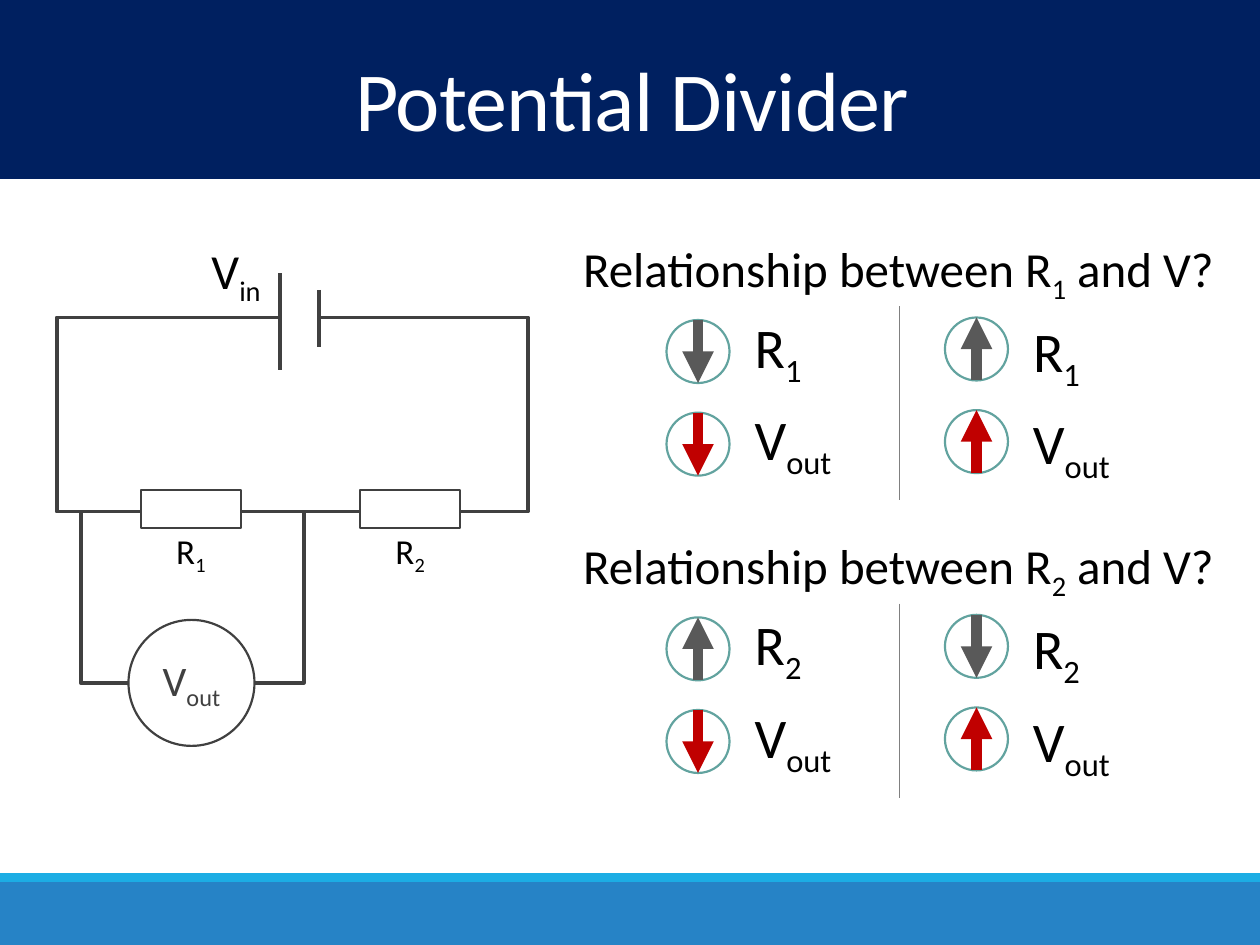
from dataclasses import dataclass

from lxml import etree
from pptx import Presentation
from pptx.dml.color import RGBColor
from pptx.enum.shapes import MSO_CONNECTOR, MSO_SHAPE
from pptx.enum.text import MSO_ANCHOR, MSO_AUTO_SIZE, PP_ALIGN
from pptx.oxml.ns import qn
from pptx.util import Inches, Pt

RECT, OVAL = MSO_SHAPE.RECTANGLE, MSO_SHAPE.OVAL
STRAIGHT = MSO_CONNECTOR.STRAIGHT
MIDDLE, TOP = MSO_ANCHOR.MIDDLE, MSO_ANCHOR.TOP
LEFT, CENTER = PP_ALIGN.LEFT, PP_ALIGN.CENTER


@dataclass(frozen=True)
class Theme:
    font: str = "Calibri"
    navy: str = "002060"
    footer: str = "2683C6"
    stripe: str = "1CADE4"
    white: str = "FFFFFF"
    black: str = "000000"
    wire: str = "404040"
    ring: str = "62A39F"
    cause: str = "595959"
    effect: str = "C00000"
    divider: str = "808080"
    title_size: float = 48
    symbol_size: float = 32
    heading_size: float = 28
    meter_size: float = 24
    resistor_size: float = 20
    wire_width: float = 2.25
    outline_width: float = 1.25
    arrow_width: float = 6
    divider_width: float = 0.5


@dataclass(frozen=True)
class Column:
    """One case: where it stands and which way each quantity moves."""
    x: float
    ring_y: float
    label_y: float
    resistance_up: bool
    voltage_up: bool


@dataclass(frozen=True)
class Relationship:
    y: float
    resistor: str
    columns: tuple[Column, ...]


T = Theme()
RING = 0.5
ROW_STEP = 0.735
RESISTOR_W, RESISTOR_H = 0.79, 0.3
RELATIONSHIPS = (
    Relationship(1.84, "R_1", (Column(5.29, 0.7, 0.59, False, False),
                               Column(7.5, 0.68, 0.62, True, True))),
    Relationship(4.2, "R_2", (Column(5.29, 0.7, 0.59, True, False),
                              Column(7.5, 0.68, 0.62, False, True))),
)


def rgb(value: str) -> RGBColor:
    return RGBColor.from_string(value)


def write(tf, text: str, *, size: float, color: str = T.black, align=LEFT,
          anchor=TOP, wrap: bool = False, line_spacing: float | None = None,
          tracking: int | None = None) -> None:
    """Write one paragraph; every second part between underscores is a subscript."""
    tf.word_wrap = wrap
    tf.vertical_anchor = anchor
    p = tf.paragraphs[0]
    p.alignment = align
    p.line_spacing = line_spacing
    for i, part in enumerate(text.split("_")):
        r = p.add_run()
        r.text = part
        r.font.name, r.font.size = T.font, Pt(size)
        r.font.color.rgb = rgb(color)
        props = r.font._element
        if i % 2:
            props.set("baseline", "-25000")
        if tracking is not None:
            props.set("spc", str(tracking))


def add_label(s, x: float, y: float, w: float, h: float, text: str, size: float) -> None:
    tf = s.shapes.add_textbox(Inches(x), Inches(y), Inches(w), Inches(h)).text_frame
    write(tf, text, size=size)
    tf.auto_size = MSO_AUTO_SIZE.SHAPE_TO_FIT_TEXT


def add_box(s, kind, x: float, y: float, w: float, h: float, *,
            fill: str | None = None, line: str | None = None,
            width: float = T.outline_width):
    sp = s.shapes.add_shape(kind, Inches(x), Inches(y), Inches(w), Inches(h))
    sp.shadow.inherit = False
    if fill:
        sp.fill.solid()
        sp.fill.fore_color.rgb = rgb(fill)
    else:
        sp.fill.background()
    if line:
        sp.line.color.rgb = rgb(line)
        sp.line.width = Pt(width)
    else:
        sp.line.fill.background()
    return sp


def add_line(s, x1: float, y1: float, x2: float, y2: float, *,
             color: str, width: float, arrow: bool = False) -> None:
    c = s.shapes.add_connector(STRAIGHT, Inches(x1), Inches(y1), Inches(x2), Inches(y2))
    c.line.color.rgb = rgb(color)
    c.line.width = Pt(width)
    if arrow:
        etree.SubElement(c.line._get_or_add_ln(), qn("a:tailEnd"), type="triangle")
    etree.SubElement(c._element.spPr, qn("a:effectLst"))


def add_frame(s) -> None:
    add_box(s, RECT, 0, 7, 10, 0.5, fill=T.footer)
    add_box(s, RECT, 0, 6.93, 10, 0.07, fill=T.stripe)
    band = add_box(s, RECT, 0, 0, 10, 1.42, fill=T.navy)
    title = s.shapes.title
    title.left, title.top = Inches(0.03), Inches(0.42)
    title.width, title.height = Inches(9.97), Inches(0.84)
    write(title.text_frame, "Potential Divider", size=T.title_size, color=T.white,
          align=CENTER, anchor=MIDDLE, wrap=True, line_spacing=0.85, tracking=-50)
    band.element.addnext(title.element)


def add_circuit(s) -> None:
    add_box(s, RECT, 0.45, 2.52, 3.74, 1.54, line=T.wire, width=T.wire_width)
    add_box(s, RECT, 2.22, 2.39, 0.3, 0.26, fill=T.white)
    for x, top, bottom in ((2.22, 2.17, 2.94), (2.53, 2.3, 2.75)):
        add_line(s, x, top, x, bottom, color=T.wire, width=T.wire_width)
    add_label(s, 1.58, 1.86, 0.61, 0.57, "V_in", T.heading_size)

    add_box(s, RECT, 0.64, 4.06, 1.77, 1.36, line=T.wire, width=T.wire_width)
    meter = add_box(s, OVAL, 1.02, 4.92, 1, 1, fill=T.white, line=T.wire)
    write(meter.text_frame, "V_out", size=T.meter_size, color=T.wire,
          align=CENTER, anchor=MIDDLE, wrap=True)

    for x, name in ((1.12, "R_1"), (2.86, "R_2")):
        add_box(s, RECT, x, 3.89, RESISTOR_W, RESISTOR_H, fill=T.white, line=T.wire)
        add_label(s, x + 0.18, 4.15, 0.45, 0.44, name, T.resistor_size)


def add_ringed_arrow(s, x: float, y: float, up: bool, color: str) -> None:
    add_box(s, OVAL, x, y, RING, RING, fill=T.white, line=T.ring)
    start, end = (y + RING, y) if up else (y, y + RING)
    mid = x + RING / 2
    add_line(s, mid, start, mid, end, color=color, width=T.arrow_width, arrow=True)


def add_relationship(s, rel: Relationship) -> None:
    add_label(s, 4.53, rel.y, 5.21, 0.57,
              f"Relationship between {rel.resistor}_ and V?", T.heading_size)
    add_line(s, 7.14, rel.y + 0.59, 7.14, rel.y + 2.13,
             color=T.divider, width=T.divider_width)
    for col in rel.columns:
        rows = ((rel.resistor, 0.59, col.resistance_up, T.cause),
                ("V_out", 0.84, col.voltage_up, T.effect))
        for i, (name, width, up, color) in enumerate(rows):
            y = rel.y + i * ROW_STEP
            add_ringed_arrow(s, col.x, y + col.ring_y, up, color)
            add_label(s, col.x + 0.6, y + col.label_y, width, 0.64, name, T.symbol_size)


def main() -> None:
    prs = Presentation()
    prs.slide_width, prs.slide_height = Inches(10), Inches(7.5)
    s = prs.slides.add_slide(prs.slide_layouts.get_by_name("Title Only"))
    add_frame(s)
    add_circuit(s)
    for rel in RELATIONSHIPS:
        add_relationship(s, rel)
    prs.save("out.pptx")


if __name__ == "__main__":
    main()
